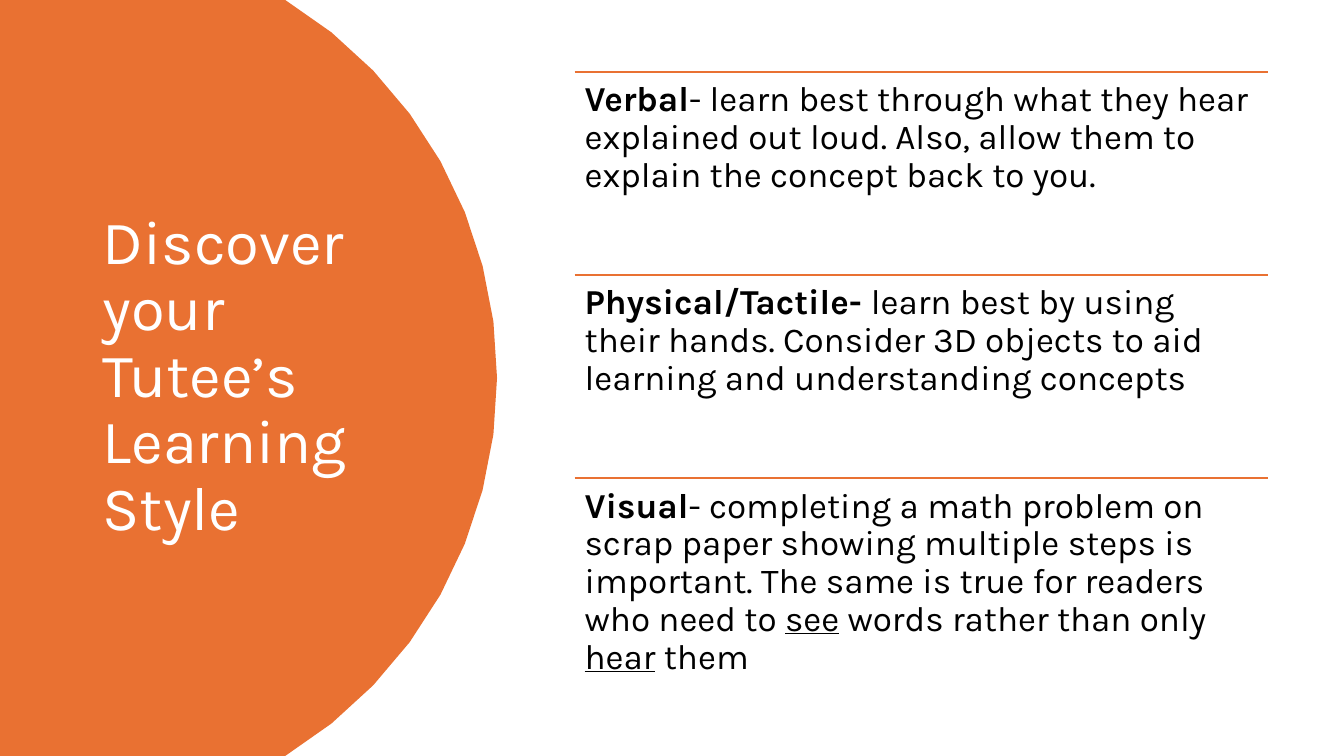
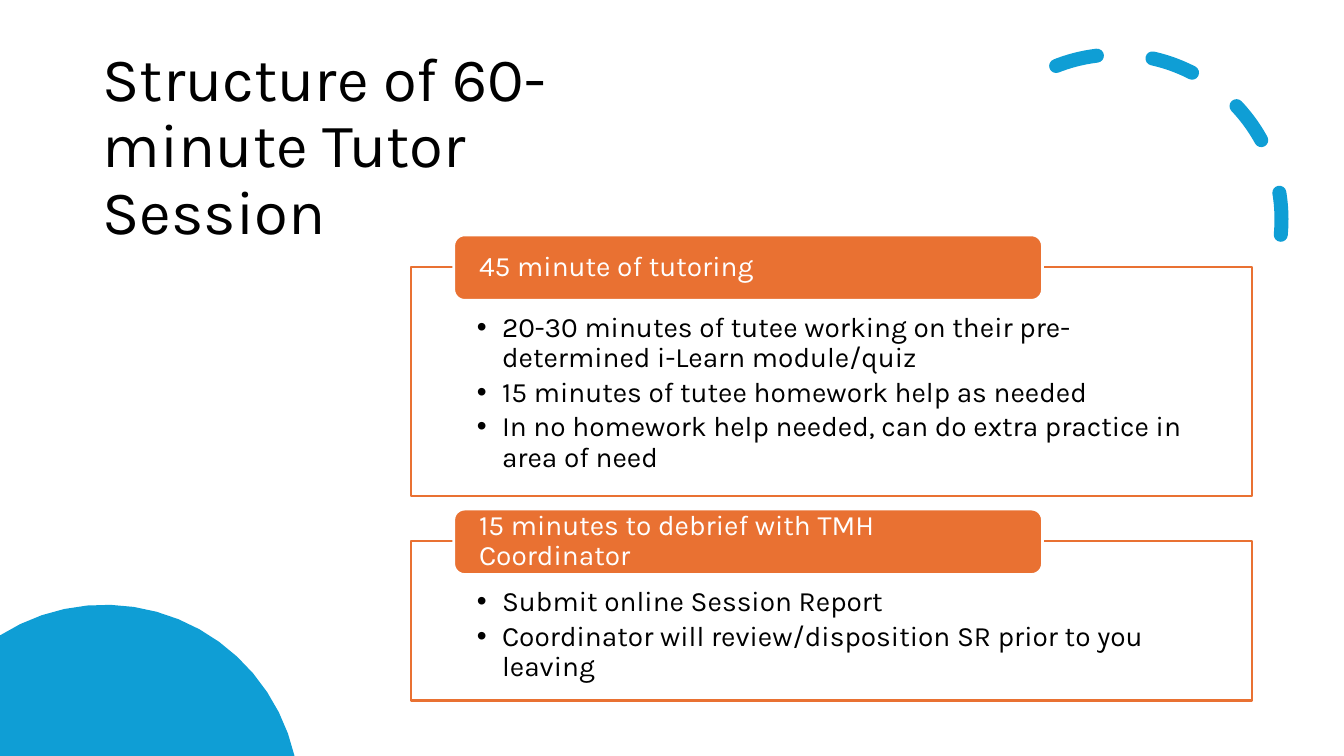
import math

import pptx
import pptx.dml.color
import pptx.enum.dml
import pptx.enum.shapes
import pptx.enum.text
import pptx.oxml.ns
import pptx.util
from lxml import etree

Inches = pptx.util.Inches
Pt = pptx.util.Pt
KIND = pptx.enum.shapes.MSO_SHAPE
ANCHOR = pptx.enum.text.MSO_ANCHOR
qn = pptx.oxml.ns.qn

WIDE, HIGH = 13.33, 7.5
FONT = "Karla"
COLORS = {"orange": "E97132", "blue": "0F9ED5", "white": "FFFFFF", "black": "000000"}

STYLES = [
    [("Verbal", "b"), "- learn best through what they hear explained out loud. "
     "Also, allow them to explain the concept back to you."],
    [("Physical/Tactile- ", "b"), "learn best by using their hands. "
     "Consider 3D objects to aid learning and understanding concepts"],
    [("Visual", "b"), "- completing a math problem on scrap paper showing multiple "
     "steps is important. The same is true for readers who need to ",
     ("see", "u"), " words rather than only ", ("hear", "u"), " them"],
]
PARTS = [
    (2.65, 2.27, "45 minute of tutoring", [
        "20-30 minutes of tutee working on their pre-determined i-Learn module/quiz",
        "15 minutes of tutee homework help as needed",
        "In no homework help needed, can do extra practice in area of need"]),
    (5.37, 1.58, "15 minutes to debrief with TMH Coordinator", [
        "Submit online Session Report",
        "Coordinator will review/disposition SR prior to you leaving"]),
]


def rgb(name):
    return pptx.dml.color.RGBColor.from_string(COLORS[name])


def paint(shape, fill=None, line=None, width=1.5):
    shape.shadow.inherit = False
    if fill:
        shape.fill.solid()
        shape.fill.fore_color.rgb = rgb(fill)
    else:
        shape.fill.background()
    if line:
        shape.line.color.rgb = rgb(line)
        shape.line.width = Pt(width)
    else:
        shape.line.fill.background()


def bullet(para):
    props = para._p.get_or_add_pPr()
    props.set("marL", str(Inches(0.25)))
    props.set("indent", str(Inches(-0.25)))
    etree.SubElement(props, qn("a:buFont")).set("typeface", "Arial")
    etree.SubElement(props, qn("a:buChar")).set("char", "•")


def write(shape, paras, size=20, color="black", anchor=ANCHOR.TOP,
          inset=(0.1, 0.1, 0.1, 0.1), after=0, dots=False):
    """Fill a shape with paragraphs, each a list of texts or (text, "b" or "u")."""
    frame = shape.text_frame
    frame.word_wrap = True
    frame.vertical_anchor = anchor
    (frame.margin_left, frame.margin_top,
     frame.margin_right, frame.margin_bottom) = map(Inches, inset)
    for num, runs in enumerate(paras):
        para = frame.add_paragraph() if num else frame.paragraphs[0]
        para.alignment = pptx.enum.text.PP_ALIGN.LEFT
        para.line_spacing = 0.9
        para.space_after = Pt(after)
        if dots:
            bullet(para)
        for item in runs:
            words, mark = (item, "") if isinstance(item, str) else item
            run = para.add_run()
            run.text = words
            run.font.name = FONT
            run.font.size = Pt(size)
            run.font.color.rgb = rgb(color)
            run.font.bold = mark == "b"
            run.font.underline = mark == "u"


def label(slide, box, paras, **look):
    write(slide.shapes.add_textbox(*map(Inches, box)), paras, **look)


def title(slide, box, text, color):
    label(slide, box, [[text]], size=44, color=color, anchor=ANCHOR.MIDDLE,
          inset=(0.1, 0.05, 0.1, 0.05))


def disc(slide, x, y, radius, start, end, ends, color):
    """Draw the visible part of a circle: an arc in degrees, closed by end points."""
    steps = 16
    dots = []
    for step in range(steps + 1):
        turn = math.radians(start + (end - start) * step / steps)
        dots.append((x + radius * math.cos(turn), y + radius * math.sin(turn)))
    dots = [(Inches(max(across, 0)), Inches(min(max(down, 0), HIGH)))
            for across, down in dots + ends]
    outline = slide.shapes.build_freeform(*dots[0])
    outline.add_line_segments(dots[1:], close=True)
    paint(outline.convert_to_shape(), color)


def rule(slide, x, y, width):
    line = slide.shapes.add_connector(
        pptx.enum.shapes.MSO_CONNECTOR.STRAIGHT,
        Inches(x), Inches(y), Inches(x + width), Inches(y))
    line.line.color.rgb = rgb("orange")
    line.line.width = Pt(1.5)
    etree.SubElement(line._element.spPr, qn("a:effectLst"))


def arc(slide, box):
    shape = slide.shapes.add_shape(KIND.ARC, *map(Inches, box))
    shape.adjustments[0] = 144.42
    shape.adjustments[1] = 0
    shape.rotation = 66.1
    paint(shape, line="blue", width=10)
    shape.line.dash_style = pptx.enum.dml.MSO_LINE.DASH
    shape.line._ln.set("cap", "rnd")
    shape._element.spPr.find(qn("a:xfrm")).set("flipH", "1")


def panel(slide, top, height, head, items):
    left = 4.08
    frame = slide.shapes.add_shape(
        KIND.RECTANGLE, *map(Inches, (left, top, 8.34, height)))
    paint(frame, "white", "orange")
    write(frame, [[item] for item in items], after=3, dots=True,
          inset=(0.65, 0.46, 0.65, 0.16))
    tab = slide.shapes.add_shape(
        KIND.ROUNDED_RECTANGLE, *map(Inches, (left + 0.42, top - 0.32, 5.84, 0.65)))
    paint(tab, "orange", "white", 2)
    write(tab, [[head]], color="white", anchor=ANCHOR.MIDDLE,
          inset=(0.22, 0, 0.22, 0))


def learn(slide):
    disc(slide, 0.53, HIGH / 2, 4.4, -58.5, 58.5, [(0, HIGH), (0, 0)], "orange")
    title(slide, (0.92, 0.7, 3.23, 6.09), "Discover your Tutee’s Learning Style", "white")
    left, width, first, last = 5.7, 6.88, 0.71, 4.74
    pitch = (last - first) / (len(STYLES) - 1)
    for num, runs in enumerate(STYLES):
        top = first + num * pitch
        rule(slide, left, top, width)
        label(slide, (left, top, width, pitch), [runs], size=25,
              inset=(0.1, 0.1, 0.14, 0.1))


def session(slide):
    arc(slide, (9.44, 0.54, 3.27, 3.27))
    title(slide, (0.92, 0.74, 5.97, 1.45), "Structure of 60-minute Tutor Session", "black")
    disc(slide, 1.04, 7.93, 1.93, 237.4, 347.1, [(2.92, HIGH), (0, HIGH)], "blue")
    for part in PARTS:
        panel(slide, *part)


def main():
    deck = pptx.Presentation()
    deck.slide_width, deck.slide_height = Inches(WIDE), Inches(HIGH)
    for build in (learn, session):
        build(deck.slides.add_slide(deck.slide_layouts[6]))
    deck.save("out.pptx")


if __name__ == "__main__":
    main()
